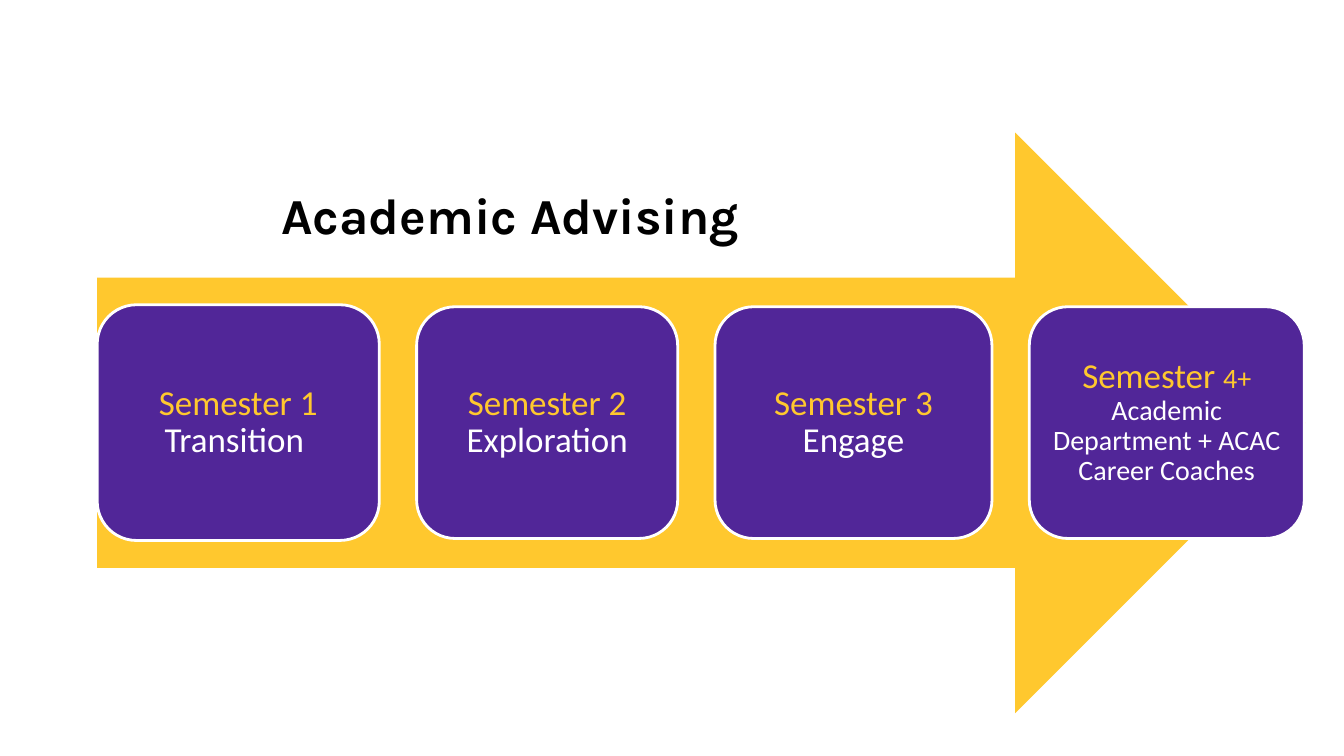
from pptx import Presentation
from pptx.dml.color import RGBColor
from pptx.enum.shapes import MSO_SHAPE
from pptx.enum.text import MSO_ANCHOR, MSO_AUTO_SIZE, PP_ALIGN
from pptx.util import Cm, Pt

ARROW = MSO_SHAPE.RIGHT_ARROW
ROUNDED = MSO_SHAPE.ROUNDED_RECTANGLE
MIDDLE = MSO_ANCHOR.MIDDLE
NO_AUTOFIT = MSO_AUTO_SIZE.NONE
CENTER = PP_ALIGN.CENTER

GOLD = RGBColor(0xFF, 0xC8, 0x2E)
PURPLE = RGBColor(0x51, 0x26, 0x98)
WHITE = RGBColor(0xFF, 0xFF, 0xFF)
BLACK = RGBColor(0x00, 0x00, 0x00)

prs = Presentation()
prs.slide_width, prs.slide_height = Cm(33.87), Cm(19.05)
s = prs.slides.add_slide(prs.slide_layouts[5])

title = s.shapes.title
title.left, title.top, title.width, title.height = Cm(-1.75), Cm(3.56), Cm(29.21), Cm(3.68)
tf = title.text_frame
tf.auto_size = NO_AUTOFIT
tf.vertical_anchor = MIDDLE
p = tf.paragraphs[0]
p.alignment = CENTER
r = p.add_run()
r.text = "Academic Advising"
r.font.name = "Karla"
r.font.size = Pt(36)
r.font.bold = True
r.font.color.rgb = BLACK

arrow = s.shapes.add_shape(ARROW, Cm(2.45), Cm(3.34), Cm(30.45), Cm(14.63))
arrow.shadow.inherit = False
arrow.fill.solid()
arrow.fill.fore_color.rgb = GOLD
arrow.line.fill.background()

MID_Y = 10.65
GAP = 0.94
semesters = [
    (7.11, 5.94, [("Semester 1", 25)], "Transition ", 25),
    (6.58, 5.84, [("Semester 2", 25)], "Exploration", 25),
    (6.98, 5.84, [("Semester 3", 25)], "Engage", 25),
    (6.93, 5.84, [("Semester ", 25), ("4+", 20)],
     "Academic Department + ACAC Career Coaches", 20),
]

left = 2.45
for width, height, heading, focus, focus_size in semesters:
    sp = s.shapes.add_shape(ROUNDED, Cm(left), Cm(MID_Y - height / 2), Cm(width), Cm(height))
    left += width + GAP
    sp.shadow.inherit = False
    sp.fill.solid()
    sp.fill.fore_color.rgb = PURPLE
    sp.line.color.rgb = WHITE
    sp.line.width = Pt(2)
    tf = sp.text_frame
    tf.word_wrap = True
    tf.vertical_anchor = MIDDLE
    tf.margin_left = tf.margin_right = tf.margin_top = tf.margin_bottom = Cm(0.25)
    p = tf.paragraphs[0]
    p.alignment = CENTER
    p.line_spacing = 0.9
    runs = [(text, size, GOLD) for text, size in heading] + [(focus, focus_size, WHITE)]
    for text, size, color in runs:
        if text == focus:
            p.add_line_break()
        r = p.add_run()
        r.text = text
        r.font.name = "Calibri"
        r.font.size = Pt(size)
        r.font.color.rgb = color

prs.save("out.pptx")
